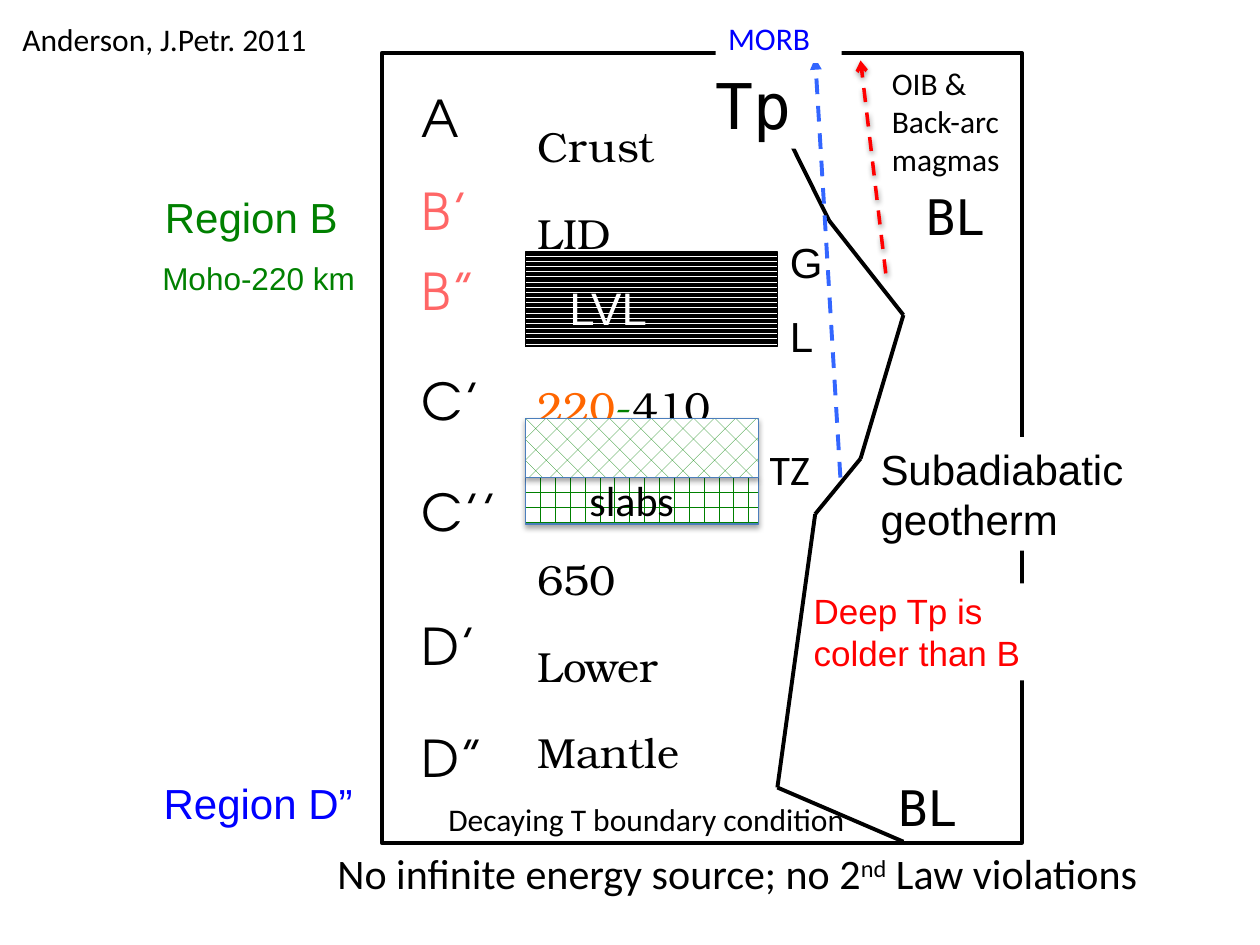
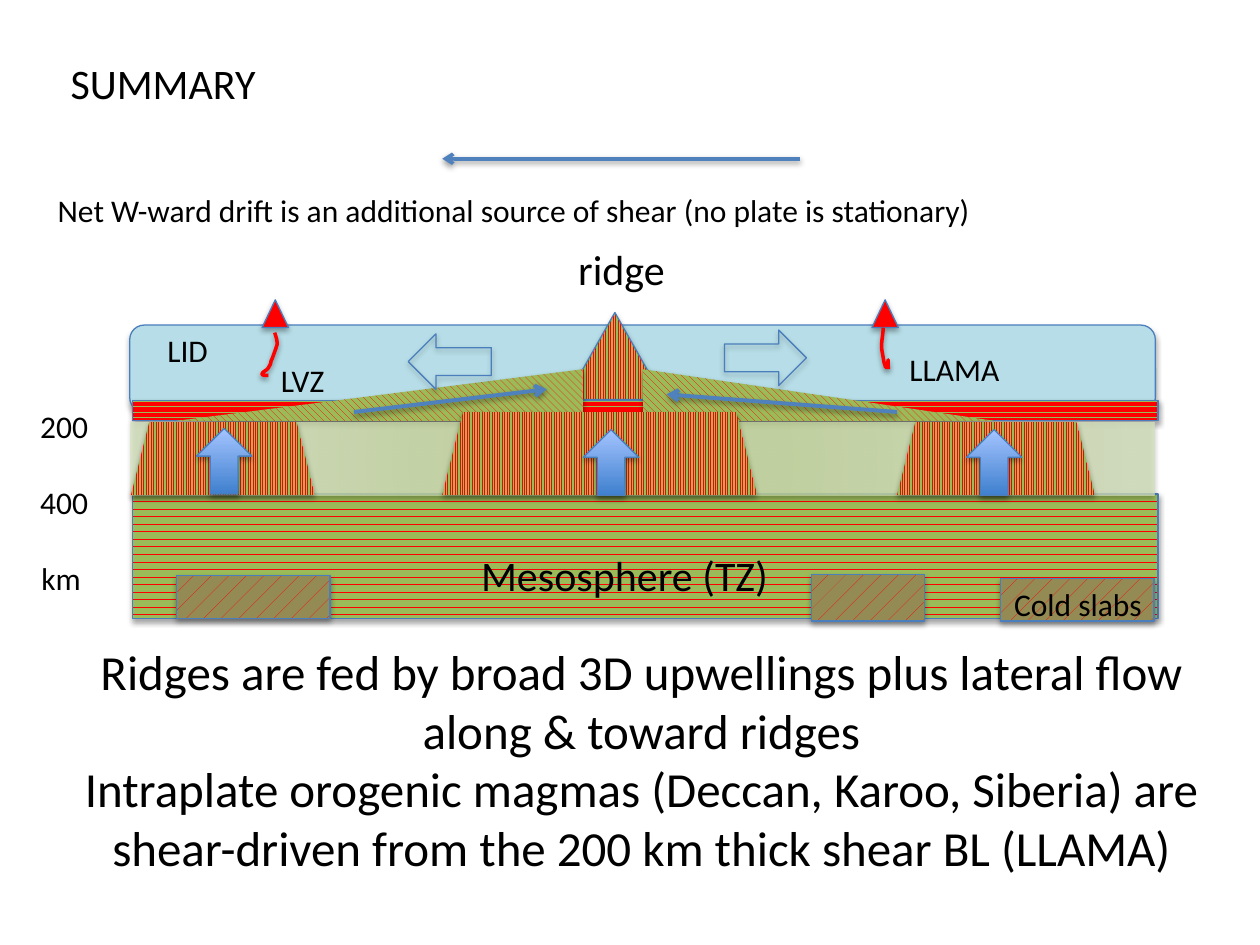
import itertools
import lxml.etree
import pptx
import pptx.util
import pptx.dml.color
import pptx.enum.dml
import pptx.enum.shapes
import pptx.enum.text
import pptx.oxml
import pptx.oxml.ns

SHAPE = pptx.enum.shapes.MSO_SHAPE
PATTERN = pptx.enum.dml.MSO_PATTERN
ANCHOR = pptx.enum.text.MSO_ANCHOR
ALIGN = pptx.enum.text.PP_ALIGN
qn = pptx.oxml.ns.qn

COLOURS = {
    "black": "000000", "white": "FFFFFF", "red": "FF0000", "pink": "FF6666",
    "orange": "FF6600", "green": "008000", "blue": "0000FF", "sky": "3366FF",
    "outline": "4B7EBC", "accent": "4F81BD", "lid": "B7DEE8", "mantle": "9BBB59",
    "slab": "948A54", "flow_low": "3F80CE", "flow_high": "A4C4FF",
    "haze_in": "C3D69B", "haze_out": "D7E4BD",
}
SANS, BODY, MONO = "Arial", "Calibri", "DejaVu Sans Mono"
GEOMETRIC, SERIF = "TeX Gyre Adventor", "TeX Gyre Bonum"

FRAME = (3.03, 0.42, 5.08, 6.27)
REGION_LETTERS = [
    ("A", 0.93, "black"), ("B’", 1.67, "pink"), ("B”", 2.3, "pink"),
    ("C’", 3.18, "black"), ("C’’", 4.06, "black"),
    ("D’", 5.12, "black"), ("D”", 6.01, "black"),
]
DEPTH_TOP, DEPTH_PITCH = 1.16, 0.687
DEPTH_ROWS = {
    0: [("Crust", "black")],
    1: [("LID", "black")],
    3: [("220", "orange"), ("-", "green"), ("410", "black")],
    5: [("650", "black")],
    6: [("Lower", "black")],
    7: [("Mantle", "black")],
}
GEOTHERM = [(5.92, 0.42), (6.58, 1.75), (7.17, 2.5), (6.83, 3.64),
            (6.47, 4.08), (6.17, 6.25), (7.17, 6.68)]
ZONES = [
    (SHAPE.RECTANGLE, (4.17, 2, 2, 0.75),
     (PATTERN.DARK_HORIZONTAL, "black", "white"), "black", False),
    (SHAPE.RECTANGLE, (4.17, 3.79, 1.85, 0.37),
     (PATTERN.HORIZONTAL_BRICK, "green", "white"), "outline", True),
    (SHAPE.RECTANGLE, (4.17, 3.32, 1.85, 0.47),
     (PATTERN.DIAGONAL_BRICK, "green", "white"), "outline", True),
]
MASKING_LABELS = [
    (["Tp"], (5.58, 0.48, 0.88, 0.7), MONO, 36, "black"),
    (["Subadiabatic geotherm"], (6.89, 3.47, 2.17, 0.9), SANS, 24, "black"),
    (["Deep Tp is colder than B"], (6.36, 4.63, 1.94, 0.77), SANS, 20, "red"),
]
MORB_LABEL = (["MORB"], (5.68, 0.1, 1, 0.4), BODY, 18, "blue")
SECTION_LABELS = [
    (["BL"], (7.25, 1.43, 0.92, 0.57), MONO, 28, "black"),
    (["BL"], (7.03, 6.12, 0.83, 0.57), MONO, 28, "black"),
    (["LVL"], (4.42, 2.17, 1.33, 0.53), SANS, 26, "white"),
    (["G", "L"], (6.17, 1.83, 0.5, 1.1), SANS, 24, "black", 13.5),
    (["Region B"], (1.21, 1.47, 1.81, 0.5), SANS, 24, "green"),
    (["Moho-220 km"], (1.19, 2.01, 1.83, 0.4), SANS, 18, "green"),
    (["Region D”"], (1.2, 6.12, 1.95, 0.5), SANS, 24, "blue"),
    (["slabs"], (4.58, 3.72, 1.33, 0.5), BODY, 24, "black"),
    (["TZ"], (6.01, 3.47, 0.67, 0.5), BODY, 24, "black"),
    (["OIB &", "Back-arc magmas"], (6.98, 0.46, 1.32, 1.01), BODY, 18, "black"),
    (["Decaying T boundary condition"], (3.46, 6.3, 3.45, 0.4), BODY, 18, "black"),
    (["Anderson, J.Petr. 2011"], (0.08, 0.11, 2.62, 0.4), BODY, 18, "black"),
]
ENERGY_LINE = ["No infinite energy source; no 2", "nd", " Law violations"]

UPWELLING = (PATTERN.LIGHT_VERTICAL, "red", "mantle")
FLANK = (PATTERN.WIDE_DOWNWARD_DIAGONAL, "red", "mantle")
COLD = (PATTERN.PERCENT_5, "red", "slab")
FLOW = {"stops": [(0, "flow_low", 100), (100, "flow_high", 100)],
        "path": '<a:lin ang="16200000" scaled="0"/>'}
HAZE = {"stops": [(27, "haze_in", 82), (95, "haze_out", 76)],
        "path": '<a:path path="circle"><a:fillToRect l="50000" t="50000" '
                'r="50000" b="50000"/></a:path>'}
MANTLE_LAYERS = [
    (SHAPE.RECTANGLE, (1.05, 3.92, 8.14, 0.99),
     (PATTERN.DASHED_HORIZONTAL, "red", "mantle"), "outline"),
    (SHAPE.ROUNDED_RECTANGLE, (1.03, 2.58, 8.14, 0.69), "lid", "outline"),
    (SHAPE.ISOSCELES_TRIANGLE, (4.49, 2.48, 0.78, 0.69), UPWELLING, "outline"),
    (SHAPE.RECTANGLE, (1.05, 3.18, 8.14, 0.16),
     (PATTERN.DARK_HORIZONTAL, "red", "mantle"), "outline"),
    (SHAPE.RIGHT_TRIANGLE, (5.1, 2.93, 2.79, 0.41), FLANK, None),
    (SHAPE.RIGHT_TRIANGLE, (1.4, 2.93, 3.23, 0.41), FLANK, None, True, True),
    (SHAPE.LEFT_ARROW, (3.24, 2.65, 0.66, 0.44), None, "outline"),
    (SHAPE.RIGHT_ARROW, (5.75, 2.62, 0.65, 0.44), None, "outline"),
    (SHAPE.RECTANGLE, (1.04, 3.35, 8.12, 0.58), HAZE, None),
]
UPWELLING_BOXES = [(7.12, 3.35, 1.57, 0.58), (3.51, 3.27, 2.5, 0.66), (1.04, 3.35, 1.46, 0.58)]
RISING_FLOWS = [(1.56, 3.4), (4.63, 3.41), (7.67, 3.41)]
VOLCANO_LEFTS = [6.92, 2.08]
COLD_SLABS = [(1.4, 4.57, 1.22, 0.34), (6.44, 4.56, 0.9, 0.37), (7.94, 4.59, 1.22, 0.34)]
MAGMA_TRAILS = [
    [(2.18, 2.64), (2.19, 2.67), (2.2, 2.7), (2.2, 2.73),
     (2.2, 2.74), (2.16, 2.85), (2.15, 2.87),
     (2.15, 2.89), (2.14, 2.9), (2.13, 2.92),
     (2.12, 2.94), (2.08, 2.95), (2.08, 2.97),
     (2.08, 2.98), (2.12, 2.98), (2.13, 2.98)],
    [(7.01, 2.6), (7.01, 2.66), (6.99, 2.73), (7, 2.78),
     (7.05, 3.12), (7.05, 2.7), (7.05, 2.93)],
]
DRIFT_ARROWS = [
    ((2.81, 3.27), (4.34, 3.09), 2.25),
    ((7.12, 3.27), (5.29, 3.13), 2.25),
    ((6.35, 1.26), (3.51, 1.26), 2),
]
SUMMARY_LABELS = [
    (["Mesosphere (TZ)"], (3.72, 4.31, 2.67, 0.5), BODY, 24, "black"),
    (["LID"], (1.23, 2.58, 0.75, 0.4), BODY, 18, "black"),
    (["LVZ"], (2.13, 2.82, 0.68, 0.4), BODY, 18, "black"),
    (["LLAMA"], (7.12, 2.73, 1.26, 0.4), BODY, 18, "black"),
    (["200", "400"], (0.22, 3.18, 0.65, 1.01), BODY, 18, "black", 22),
    (["km"], (0.23, 4.39, 0.64, 0.4), BODY, 18, "black"),
    (["ridge"], (4.49, 1.88, 1.11, 0.5), BODY, 24, "black"),
    (["Cold slabs"], (7.95, 4.59, 1.49, 0.41), BODY, 18, "black"),
    (["Net W-ward drift is an additional source of shear (no plate is stationary)"],
     (0.36, 1.47, 7.84, 0.4), BODY, 18, "black"),
]
CONCLUSIONS = [
    "Ridges are fed by broad 3D upwellings plus lateral flow along & toward ridges",
    "Intraplate orogenic magmas (Deccan, Karoo, Siberia) are shear-driven from "
    "the 200 km thick shear BL (LLAMA)",
]


def inches(value):
    return pptx.util.Cm(value * 2.54)


def rgb(colour):
    return pptx.dml.color.RGBColor.from_string(COLOURS[colour])


def add_run(paragraph, words, font, size, colour):
    run = paragraph.add_run()
    run.text = words
    run.font.name, run.font.size = font, pptx.util.Pt(size)
    run.font.color.rgb = rgb(colour)
    return run


def add_label(slide, paragraphs, box, font, size, colour, gap=0, fill=None,
              align=ALIGN.LEFT, anchor=ANCHOR.TOP):
    label = slide.shapes.add_textbox(*map(inches, box))
    if fill:
        label.fill.solid()
        label.fill.fore_color.rgb = rgb(fill)
    frame = label.text_frame
    frame.word_wrap, frame.vertical_anchor = True, anchor
    for index, runs in enumerate(paragraphs):
        paragraph = frame.add_paragraph() if index else frame.paragraphs[0]
        paragraph.alignment = align
        if index:
            paragraph.space_before = pptx.util.Pt(gap)
        for words, tint in [(runs, colour)] if isinstance(runs, str) else runs:
            add_run(paragraph, words, font, size, tint)
    return label


def cast_shadow(properties, alpha, distance):
    effects = properties.find(qn("a:effectLst"))
    shadow = lxml.etree.SubElement(effects, qn("a:outerShdw"), blurRad="40000",
                                   dist=str(distance), dir="5400000", rotWithShape="0")
    black = lxml.etree.SubElement(shadow, qn("a:srgbClr"), val=COLOURS["black"])
    lxml.etree.SubElement(black, qn("a:alpha"), val=str(alpha * 1000))


def paint(shape, fill):
    if isinstance(fill, str):
        shape.fill.solid()
        shape.fill.fore_color.rgb = rgb(fill)
    elif isinstance(fill, tuple):
        shape.fill.patterned()
        shape.fill.pattern = fill[0]
        shape.fill.fore_color.rgb, shape.fill.back_color.rgb = rgb(fill[1]), rgb(fill[2])
    else:
        shape.fill.background()
    if isinstance(fill, dict):
        stops = "".join(
            f'<a:gs pos="{place * 1000}"><a:srgbClr val="{COLOURS[colour]}">'
            f'<a:alpha val="{alpha * 1000}"/></a:srgbClr></a:gs>'
            for place, colour, alpha in fill["stops"])
        gradient = pptx.oxml.parse_xml(
            f'<a:gradFill {pptx.oxml.ns.nsdecls("a")} rotWithShape="1">'
            f'<a:gsLst>{stops}</a:gsLst>{fill["path"]}</a:gradFill>')
        properties = shape._element.spPr
        properties.replace(properties.find(qn("a:noFill")), gradient)


def outline(line, colour, width):
    line.color.rgb = rgb(colour)
    line.width = pptx.util.Pt(width)


def add_block(slide, kind, box, fill, line, shadow=True, mirrored=False, width=0.75):
    block = slide.shapes.add_shape(kind, *map(inches, box))
    block.shadow.inherit = False
    paint(block, fill)
    if line:
        outline(block.line, line, width)
    else:
        block.line.fill.background()
    if shadow:
        cast_shadow(block._element.spPr, 35, 23000)
    if mirrored:
        block._element.spPr.find(qn("a:xfrm")).set("flipH", "1")


def add_line(slide, start, end, colour, width, head=None, dashed=False, shadow=False):
    line = slide.shapes.add_connector(pptx.enum.shapes.MSO_CONNECTOR.STRAIGHT,
                                      *map(inches, start + end))
    outline(line.line, colour, width)
    if dashed:
        line.line.dash_style = pptx.enum.dml.MSO_LINE.DASH
    properties = line._element.spPr
    if head:
        lxml.etree.SubElement(properties.find(qn("a:ln")), qn("a:tailEnd"), type=head)
    lxml.etree.SubElement(properties, qn("a:effectLst"))
    if shadow:
        cast_shadow(properties, 38, 20000)


def curve_points(knots, steps=8):
    for first in range(0, len(knots) - 1, 3):
        corners = knots[first:first + 4]
        for step in range(1, steps + 1):
            t = step / steps
            weights = ((1 - t) ** 3, 3 * t * (1 - t) ** 2, 3 * t * t * (1 - t), t ** 3)
            yield tuple(inches(sum(w * corner[axis] for w, corner in zip(weights, corners)))
                        for axis in (0, 1))


def add_trail(slide, knots):
    builder = slide.shapes.build_freeform(*map(inches, knots[0]))
    builder.add_line_segments(list(curve_points(knots)), close=False)
    trail = builder.convert_to_shape()
    trail.shadow.inherit = False
    trail.fill.background()
    outline(trail.line, "red", 2)
    cast_shadow(trail._element.spPr, 38, 20000)


def build_section(deck):
    slide = deck.slides.add_slide(deck.slide_layouts[6])
    add_block(slide, SHAPE.RECTANGLE, FRAME, None, "black", shadow=False, width=2.25)
    for letter, centre, colour in REGION_LETTERS:
        add_label(slide, [letter], (3.25, centre - 0.3, 1.08, 0.6), GEOMETRIC, 29, colour,
                  anchor=ANCHOR.MIDDLE)
    for row, runs in DEPTH_ROWS.items():
        top = DEPTH_TOP + row * DEPTH_PITCH - 0.3
        add_label(slide, [runs], (4.17, top, 1.58, 0.6), SERIF, 24, "black",
                  anchor=ANCHOR.MIDDLE)
    segments = list(itertools.pairwise(GEOTHERM))
    add_line(slide, *segments[0], "black", 2.25)
    for label in MASKING_LABELS:
        add_label(slide, *label, fill="white")
    for zone in ZONES:
        add_block(slide, *zone)
    for segment in segments[1:]:
        add_line(slide, *segment, "black", 2.25)
    add_line(slide, (6.67, 3.79), (6.47, 0.46), "sky", 2.25, "triangle", dashed=True)
    add_line(slide, (7.03, 2.17), (6.83, 0.48), "red", 2, "arrow", dashed=True, shadow=True)
    add_label(slide, *MORB_LABEL, fill="white")
    for label in SECTION_LABELS:
        add_label(slide, *label)
    energy = add_label(slide, [[(words, "black") for words in ENERGY_LINE]],
                       (2.58, 6.68, 6.7, 0.5), BODY, 24, "black")
    ordinal = energy.text_frame.paragraphs[0].runs[1]
    ordinal._r.get_or_add_rPr().set("baseline", "30000")


def build_summary(deck):
    slide = deck.slides.add_slide(deck.slide_layouts[5])
    title = slide.shapes.title
    title.left, title.top, title.width, title.height = map(inches, (0.46, 0.41, 4.48, 0.5))
    title.text_frame.auto_size = pptx.enum.text.MSO_AUTO_SIZE.NONE
    title.text_frame.vertical_anchor = ANCHOR.TOP
    heading = title.text_frame.paragraphs[0]
    heading.alignment = ALIGN.LEFT
    add_run(heading, "SUMMARY", BODY, 24, "black")
    for layer in MANTLE_LAYERS:
        add_block(slide, *layer)
    for box in UPWELLING_BOXES:
        add_block(slide, SHAPE.TRAPEZOID, box, UPWELLING, None)
    for corner in RISING_FLOWS:
        add_block(slide, SHAPE.UP_ARROW, corner + (0.44, 0.52), FLOW, "outline")
    for left in VOLCANO_LEFTS:
        add_block(slide, SHAPE.ISOSCELES_TRIANGLE, (left, 2.38, 0.21, 0.22), "red", "outline")
    for knots in MAGMA_TRAILS:
        add_trail(slide, knots)
    for box in COLD_SLABS:
        add_block(slide, SHAPE.RECTANGLE, box, COLD, "outline")
    for start, end, width in DRIFT_ARROWS:
        add_line(slide, start, end, "accent", width, "arrow", shadow=True)
    for label in SUMMARY_LABELS:
        add_label(slide, *label)
    add_label(slide, CONCLUSIONS, (0.46, 5.04, 9.26, 1.99), BODY, 28, "black",
              align=ALIGN.CENTER)


def main():
    deck = pptx.Presentation()
    deck.slide_width, deck.slide_height = inches(10), inches(7.5)
    build_section(deck)
    build_summary(deck)
    deck.save("out.pptx")


if __name__ == "__main__":
    main()
